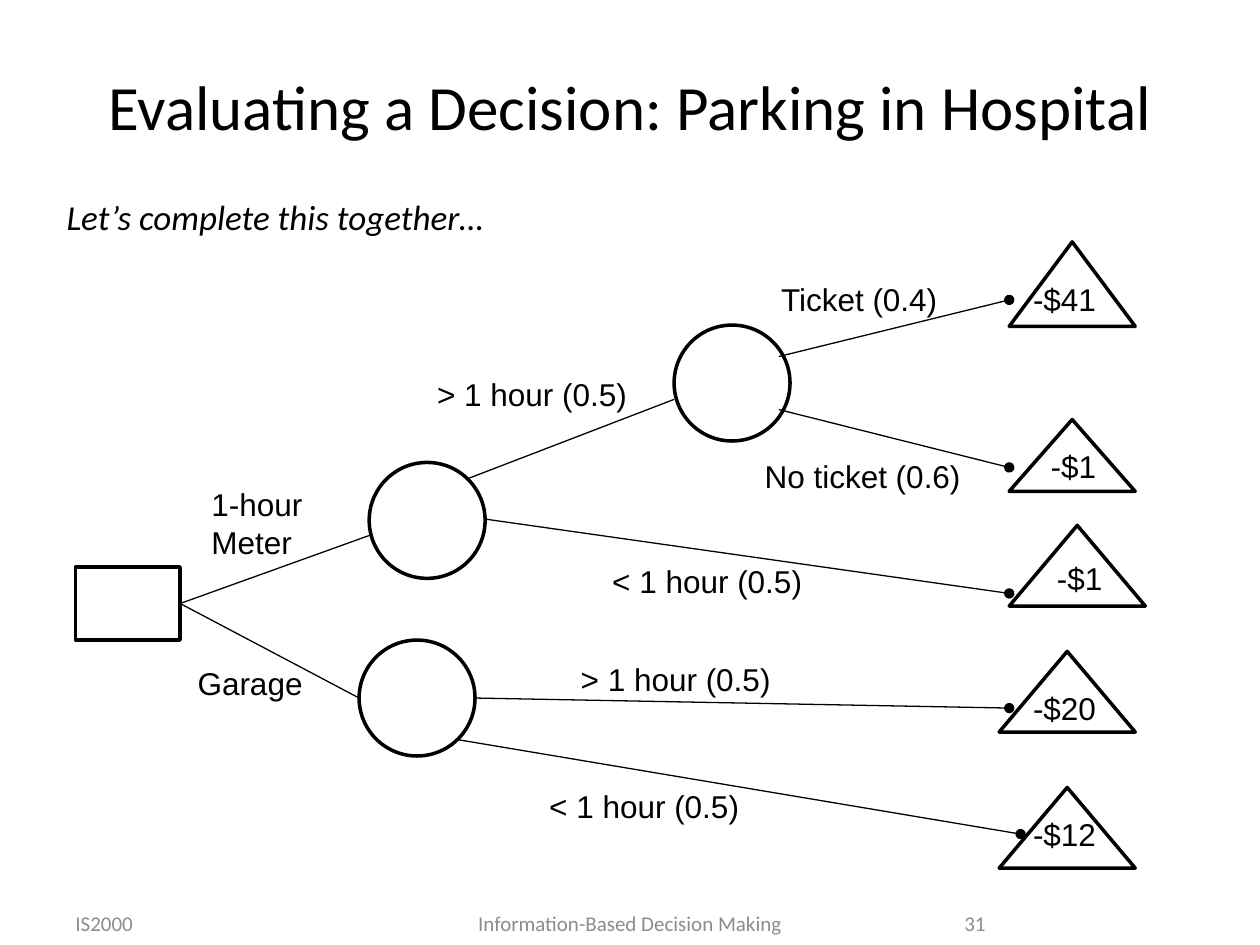
import pptx
import pptx.util
import pptx.dml.color
import pptx.enum.shapes
import pptx.enum.text
import pptx.oxml
import pptx.oxml.ns

Inches = pptx.util.Inches
Pt = pptx.util.Pt
SHAPE = pptx.enum.shapes.MSO_SHAPE
ALIGN = pptx.enum.text.PP_ALIGN
ANCHOR = pptx.enum.text.MSO_ANCHOR

BLACK = pptx.dml.color.RGBColor(0x00, 0x00, 0x00)
GRAY = pptx.dml.color.RGBColor(0x8C, 0x8C, 0x8C)

CIRCLE_SIZE = 0.92

# Chance nodes: left, top
CHANCE_NODES = [(5.35, 2.58), (2.85, 5.08), (2.93, 3.67)]

# Outcome triangles: left, top, width, height
OUTCOMES = [
    (8.01, 1.92, 1, 0.67),
    (8.01, 3.33, 1, 0.57),
    (8.01, 4.17, 1.08, 0.64),
    (7.93, 5.17, 1.08, 0.64),
    (7.93, 6.25, 1.08, 0.64),
]

# Branches: start x, start y, end x, end y
INNER_BRANCHES = [
    (1.43, 4.79, 2.93, 4.25),
    (1.43, 4.79, 2.85, 5.54),
    (3.71, 3.8, 5.35, 3.17),
]
FINAL_BRANCHES = [
    (6.18, 2.83, 8.01, 2.38),
    (6.18, 3.25, 8.01, 3.71),
    (3.85, 4.12, 8.01, 4.71),
    (3.76, 5.54, 8.01, 5.62),
    (3.63, 5.87, 8.1, 6.62),
]

# Labels: text, left, top, width, height
LABELS = [
    ("1-hour\nMeter", 1.58, 3.8, 0.93, 0.71),
    ("Garage", 1.47, 5.22, 1.04, 0.4),
    ("> 1 hour (0.5)", 3.37, 2.93, 1.72, 0.4),
    ("< 1 hour (0.5)", 4.76, 4.41, 1.72, 0.4),
    ("> 1 hour (0.5)", 4.51, 5.19, 1.72, 0.4),
    ("< 1 hour (0.5)", 4.26, 6.2, 1.72, 0.4),
    ("Ticket (0.4)", 6.1, 2.17, 1.45, 0.4),
    ("No ticket (0.6)", 5.97, 3.58, 1.77, 0.4),
    ("-$41", 8.1, 2.17, 0.71, 0.4),
    ("-$1", 8.24, 3.5, 0.57, 0.4),
    ("-$1", 8.29, 4.39, 0.57, 0.4),
    ("-$20", 8.1, 5.42, 0.71, 0.4),
    ("-$12", 8.1, 6.42, 0.71, 0.4),
]

# Footer: text, left, width, alignment
FOOTER = [
    ("IS2000", 0.5, 2.33, ALIGN.LEFT),
    ("Information-Based Decision Making", 3.07, 3.86, ALIGN.CENTER),
    ("31", 7.17, 0.75, ALIGN.RIGHT),
]


def add_text(slide, text, left, top, width, height, size, font="Calibri",
             color=BLACK, align=ALIGN.LEFT, anchor=ANCHOR.TOP,
             italic=False, wrap=True):
    box = slide.shapes.add_textbox(
        Inches(left), Inches(top), Inches(width), Inches(height))
    frame = box.text_frame
    frame.word_wrap = wrap
    frame.vertical_anchor = anchor
    frame.text = text
    for paragraph in frame.paragraphs:
        paragraph.alignment = align
        paragraph.font.name = font
        paragraph.font.size = Pt(size)
        paragraph.font.italic = italic
        paragraph.font.color.rgb = color


def add_node(slide, kind, left, top, width, height):
    shape = slide.shapes.add_shape(
        kind, Inches(left), Inches(top), Inches(width), Inches(height))
    shape.shadow.inherit = False
    shape.fill.background()
    shape.line.color.rgb = BLACK
    shape.line.width = Pt(2)


def add_branch(slide, start_x, start_y, end_x, end_y, dot=False):
    connector = slide.shapes.add_connector(
        pptx.enum.shapes.MSO_CONNECTOR.STRAIGHT,
        Inches(start_x), Inches(start_y), Inches(end_x), Inches(end_y))
    connector.line.color.rgb = BLACK
    connector.line.width = Pt(0.75)
    if dot:
        tail = pptx.oxml.parse_xml(
            f'<a:tailEnd {pptx.oxml.ns.nsdecls("a")} type="oval"/>')
        connector.line._get_or_add_ln().append(tail)
    connector._element.spPr.append(pptx.oxml.parse_xml(
        f'<a:effectLst {pptx.oxml.ns.nsdecls("a")}/>'))


def main():
    presentation = pptx.Presentation()
    presentation.slide_width = Inches(10)
    presentation.slide_height = Inches(7.5)
    slide = presentation.slides.add_slide(presentation.slide_layouts[6])

    # Heading
    add_text(slide, "Evaluating a Decision: Parking in Hospital",
             0.5, 0.3, 9, 1.07, 36, align=ALIGN.CENTER, anchor=ANCHOR.MIDDLE)
    add_text(slide, "Let’s complete this together…",
             0.43, 1.5, 9, 0.5, 20, italic=True)

    # Decision tree
    for branch in INNER_BRANCHES:
        add_branch(slide, *branch)
    for branch in FINAL_BRANCHES:
        add_branch(slide, *branch, dot=True)
    add_node(slide, SHAPE.RECTANGLE, 0.6, 4.5, 0.83, 0.58)
    for left, top in CHANCE_NODES:
        add_node(slide, SHAPE.OVAL, left, top, CIRCLE_SIZE, CIRCLE_SIZE)
    for outcome in OUTCOMES:
        add_node(slide, SHAPE.ISOSCELES_TRIANGLE, *outcome)
    for label in LABELS:
        add_text(slide, *label, 18, font="Arial", wrap=False)

    # Footer
    for text, left, width, align in FOOTER:
        add_text(slide, text, left, 7.17, width, 0.31, 12, color=GRAY,
                 align=align, anchor=ANCHOR.MIDDLE)

    presentation.save("out.pptx")


if __name__ == "__main__":
    main()
